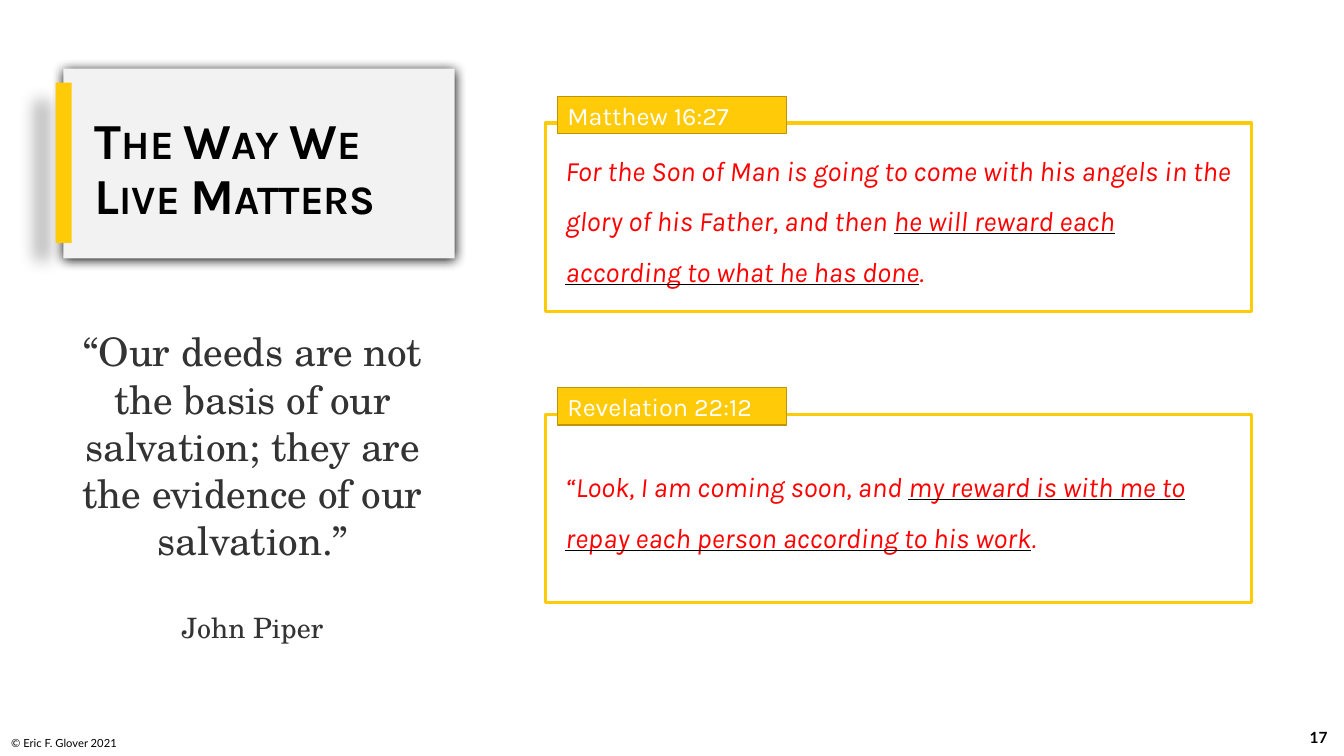
"""Build a slide with a title card, a quotation and two labelled Bible verses."""
from lxml import etree
from pptx import Presentation
from pptx import util as u
from pptx.dml.color import RGBColor
from pptx.enum import shapes, text
from pptx.oxml import ns

GOLD = RGBColor(0xFF, 0xCA, 0x08)
DARK_GOLD = RGBColor(0xBD, 0x95, 0x06)
PALE_GREY = RGBColor(0xF2, 0xF2, 0xF2)
DARK_GREY = RGBColor(0x33, 0x33, 0x33)
RED = RGBColor(0xFF, 0x00, 0x00)
BLACK = RGBColor(0x00, 0x00, 0x00)
WHITE = RGBColor(0xFF, 0xFF, 0xFF)

TITLE = "The Way We Live Matters"
QUOTE = [
    ("“Our deeds are not the basis of our salvation; they are the evidence of our salvation.”", 28),
    ("John Piper", 20),
]
VERSES = [
    ("Matthew 16:27",
     [("For the Son of Man is going to come with his angels in the glory of his Father, and then ", False),
      ("he will reward each according to what he has done", True), (".", False)]),
    ("Revelation 22:12",
     [("“Look, I am coming soon, and ", False),
      ("my reward is with me to repay each person according to his work", True), (".", False)]),
]
COPYRIGHT = "© Eric F. Glover 2021"
PAGE_NUMBER = "17"

CARD = (1.6, 1.73, 9.86, 4.78)
ACCENT_BAR = (1.4, 2.08, 0.41, 4.04)
TITLE_AREA = (2.39, 1.93, 8.89, 4.75)
QUOTE_AREA = (1.45, 8.13, 9.83, 7.09)
COPYRIGHT_AREA = (0.03, 18.31, 3.99, 0.71)
NUMBER_AREA = (32.61, 18.06, 1.24, 1.02)
VERSE_LEFT, VERSE_TOP, VERSE_WIDTH, VERSE_HEIGHT = 13.74, 3.1, 17.81, 4.75
VERSE_PITCH = 7.34
LABEL_INDENT, LABEL_RISE, LABEL_WIDTH, LABEL_HEIGHT = 0.31, 0.67, 5.77, 0.94


def add_rectangle(slide, area, fill, line=None, line_width=0):
    shape = slide.shapes.add_shape(shapes.MSO_SHAPE.RECTANGLE, *map(u.Cm, area))
    shape.shadow.inherit = False
    shape.fill.solid()
    shape.fill.fore_color.rgb = fill
    if line is None:
        shape.line.fill.background()
    else:
        shape.line.color.rgb = line
        shape.line.width = u.Pt(line_width)
    return shape


def add_shadow(shape, opacity, blur, distance, angle):
    effects = shape._element.spPr.find(ns.qn("a:effectLst"))
    shadow = etree.SubElement(effects, ns.qn("a:outerShdw"), blurRad=str(u.Pt(blur)),
                              dist=str(u.Pt(distance)), dir=str(angle * 60000),
                              algn="ctr", rotWithShape="0")
    color = etree.SubElement(shadow, ns.qn("a:srgbClr"), val=str(BLACK))
    etree.SubElement(color, ns.qn("a:alpha"), val=str(opacity * 1000))


def set_frame(shape, anchor, margins=(0.25, 0.13, 0.25, 0.13)):
    frame = shape.text_frame
    frame.word_wrap = True
    frame.vertical_anchor = anchor
    (frame.margin_left, frame.margin_top,
     frame.margin_right, frame.margin_bottom) = map(u.Cm, margins)
    return frame


def format_run(run, font_name, size, color, bold=False, italic=False):
    font = run.font
    font.name, font.size = font_name, u.Pt(size)
    font.bold, font.italic = bold, italic
    font.color.rgb = color


def underline_black(run):
    run.font.underline = True
    properties = run._r.get_or_add_rPr()
    line_fill = etree.Element(ns.qn("a:uFill"))
    solid = etree.SubElement(line_fill, ns.qn("a:solidFill"))
    etree.SubElement(solid, ns.qn("a:srgbClr"), val=str(BLACK))
    properties.find(ns.qn("a:solidFill")).addnext(line_fill)


def write_line(shape, words, anchor, alignment, font_name, size, color, bold=False, **frame_options):
    frame = set_frame(shape, anchor, **frame_options)
    frame.text = words
    paragraph = frame.paragraphs[0]
    paragraph.alignment = alignment
    format_run(paragraph.runs[0], font_name, size, color, bold)
    return paragraph


def add_text_area(slide, area):
    return slide.shapes.add_textbox(*map(u.Cm, area))


def add_title(slide):
    add_shadow(add_rectangle(slide, CARD, PALE_GREY), 100, 8.5, 1, 90)
    add_shadow(add_rectangle(slide, ACCENT_BAR, GOLD), 28, 11.8, 19.7, 141)
    paragraph = write_line(add_text_area(slide, TITLE_AREA), TITLE, text.MSO_ANCHOR.MIDDLE,
                           text.PP_ALIGN.LEFT, "Karla", 36, BLACK, True, margins=(0, 0, 0, 0))
    paragraph.line_spacing = 0.9
    paragraph.runs[0]._r.get_or_add_rPr().set("cap", "small")


def add_quote(slide):
    frame = set_frame(add_text_area(slide, QUOTE_AREA), text.MSO_ANCHOR.TOP)
    frame.text = "\n".join(words for words, size in QUOTE)
    for paragraph, (words, size) in zip(frame.paragraphs, QUOTE):
        paragraph.alignment = text.PP_ALIGN.CENTER
        paragraph.space_after = u.Pt(34)
        format_run(paragraph.runs[0], "TeX Gyre Schola", size, DARK_GREY)


def add_verse(slide, top, reference, parts):
    box = add_rectangle(slide, (VERSE_LEFT, top, VERSE_WIDTH, VERSE_HEIGHT), WHITE, GOLD, 2.25)
    paragraph = set_frame(box, text.MSO_ANCHOR.MIDDLE, (0.51, 0, 0.51, 0.25)).paragraphs[0]
    paragraph.alignment = text.PP_ALIGN.LEFT
    paragraph.line_spacing = 1.5
    paragraph.space_after = u.Pt(18)
    for words, underlined in parts:
        run = paragraph.add_run()
        run.text = words
        format_run(run, "Karla", 20, RED, italic=True)
        if underlined:
            underline_black(run)
    label_area = (VERSE_LEFT + LABEL_INDENT, top - LABEL_RISE, LABEL_WIDTH, LABEL_HEIGHT)
    label = add_rectangle(slide, label_area, GOLD, DARK_GOLD, 1)
    write_line(label, reference, text.MSO_ANCHOR.MIDDLE, text.PP_ALIGN.LEFT, "Karla", 18, WHITE)


def main():
    presentation = Presentation()
    presentation.slide_width, presentation.slide_height = u.Cm(33.87), u.Cm(19.05)
    slide = presentation.slides.add_slide(presentation.slide_layouts[6])
    number = write_line(add_text_area(slide, NUMBER_AREA), PAGE_NUMBER, text.MSO_ANCHOR.MIDDLE,
                        text.PP_ALIGN.CENTER, "Lato", 11, BLACK, True)
    number.space_after = u.Pt(6)
    write_line(add_text_area(slide, COPYRIGHT_AREA), COPYRIGHT, text.MSO_ANCHOR.BOTTOM,
               text.PP_ALIGN.LEFT, "Lato", 8, BLACK)
    add_title(slide)
    add_quote(slide)
    for index, (reference, parts) in enumerate(VERSES):
        add_verse(slide, VERSE_TOP + index * VERSE_PITCH, reference, parts)
    presentation.save("out.pptx")


if __name__ == "__main__":
    main()
